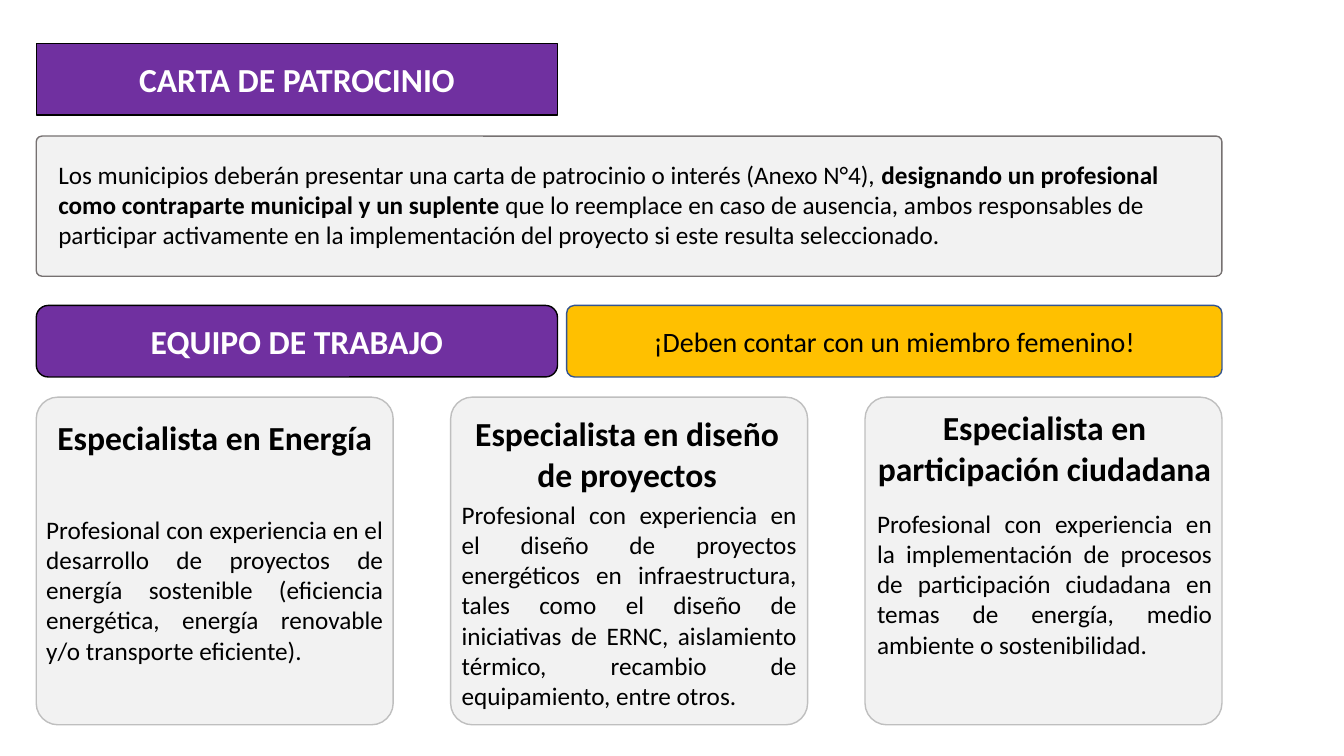
from lxml.etree import SubElement
from pptx import Presentation
from pptx.dml.color import RGBColor
from pptx.enum.shapes import MSO_SHAPE
from pptx.enum.text import MSO_ANCHOR, MSO_AUTO_SIZE, PP_ALIGN
from pptx.oxml.ns import qn
from pptx.util import Inches, Pt

PURPLE, AMBER, PALE_GRAY = "7030A0", "FFC000", "F2F2F2"
BLACK, WHITE = "000000", "FFFFFF"
LEFT = 0.36
FULL_WIDTH = 11.76
HEADING_SIZE = (5.17, 0.71)
TEAM_TOP = 3.03
CARD_TOP, CARD_WIDTH, CARD_HEIGHT = 3.94, 3.54, 3.25
CARD_STEP = (FULL_WIDTH - CARD_WIDTH) / 2

# Each card: name, place of the name, profile, place of the profile
SPECIALISTS = [
    ("Especialista en Energía", (0.37, 4.09, 3.52, 0.5),
     "Profesional con experiencia en el desarrollo de proyectos de energía sostenible "
     "(eficiencia energética, energía renovable y/o transporte eficiente).",
     (0.36, 5.05, 3.54, 1.62)),
    ("Especialista en diseño de proyectos", (4.46, 4.05, 3.52, 0.91),
     "Profesional con experiencia en el diseño de proyectos energéticos en infraestructura, "
     "tales como el diseño de iniciativas de ERNC, aislamiento térmico, recambio de "
     "equipamiento, entre otros.",
     (4.48, 4.9, 3.52, 2.22)),
    ("Especialista en participación ciudadana", (8.6, 3.99, 3.52, 0.91),
     "Profesional con experiencia en la implementación de procesos de participación "
     "ciudadana en temas de energía, medio ambiente o sostenibilidad.",
     (8.6, 4.99, 3.52, 1.62)),
]


def color(hex_code):
    return RGBColor.from_string(hex_code)


class SlideBuilder:
    font_name = "Calibri"

    def __init__(self, slide):
        self.slide = slide

    def paint(self, shape, fill, line):
        shape.fill.solid()
        shape.fill.fore_color.rgb = color(fill)
        shape.line.color.rgb = color(line)
        shape.line.width = Pt(1)

    def set_text(self, shape, spans, size, bold=None, ink=BLACK,
                 align=PP_ALIGN.LEFT, anchor=MSO_ANCHOR.TOP):
        """Fill a shape with one paragraph made of (text, bold) spans or a plain string."""
        frame = shape.text_frame
        frame.word_wrap = True
        frame.auto_size = MSO_AUTO_SIZE.NONE
        frame.vertical_anchor = anchor
        para = frame.paragraphs[0]
        para.alignment = align
        para.font.name = self.font_name
        para.font.size = Pt(size)
        para.font.bold = bold
        para.font.color.rgb = color(ink)
        if isinstance(spans, str):
            spans = [(spans, None)]
        for text, span_bold in spans:
            span = para.add_run()
            span.text = text
            span.font.bold = span_bold

    def title(self, text, left, top, width, height):
        """Turn the title placeholder into a rounded purple heading."""
        title = self.slide.shapes.title
        title.left, title.top = Inches(left), Inches(top)
        title.width, title.height = Inches(width), Inches(height)
        outline = SubElement(title.element.spPr, qn("a:prstGeom"), prst="roundRect")
        SubElement(outline, qn("a:avLst"))
        self.heading_style(title, text)

    def heading_style(self, shape, text):
        self.paint(shape, PURPLE, BLACK)
        self.set_text(shape, text, 24, True, WHITE, PP_ALIGN.CENTER, MSO_ANCHOR.MIDDLE)

    def box(self, left, top, width, height, fill, line, rounding=0.167):
        box = self.slide.shapes.add_shape(
            MSO_SHAPE.ROUNDED_RECTANGLE,
            Inches(left), Inches(top), Inches(width), Inches(height))
        box.adjustments[0] = rounding
        box.shadow.inherit = False
        self.paint(box, fill, line)
        return box

    def text(self, spans, place, size, **style):
        box = self.slide.shapes.add_textbox(*map(Inches, place))
        self.set_text(box, spans, size, **style)


def main():
    deck = Presentation()
    deck.slide_width, deck.slide_height = Inches(13.33), Inches(7.5)
    page = SlideBuilder(deck.slides.add_slide(deck.slide_layouts[5]))

    page.title("CARTA DE PATROCINIO", LEFT, 0.43, *HEADING_SIZE)
    page.box(LEFT, 1.35, FULL_WIDTH, 1.39, PALE_GRAY, "767171", 0.041)
    page.text([
        ("Los municipios deberán presentar una carta de patrocinio o interés (Anexo N°4), ", None),
        ("designando un profesional como contraparte municipal y un suplente ", True),
        ("que lo reemplace en caso de ausencia, ambos responsables de participar activamente "
         "en la implementación del proyecto si este resulta seleccionado.", None),
    ], (0.48, 1.53, 11.64, 1.01), 18)

    team_heading = page.box(LEFT, TEAM_TOP, *HEADING_SIZE, PURPLE, BLACK)
    page.heading_style(team_heading, "EQUIPO DE TRABAJO")
    notice = page.box(5.62, TEAM_TOP, 6.5, HEADING_SIZE[1], AMBER, "325491", 0.109)
    page.set_text(notice, "¡Deben contar con un miembro femenino!", 20,
                  align=PP_ALIGN.CENTER, anchor=MSO_ANCHOR.MIDDLE)

    for index, (name, name_place, profile, profile_place) in enumerate(SPECIALISTS):
        page.box(LEFT + index * CARD_STEP, CARD_TOP, CARD_WIDTH, CARD_HEIGHT,
                 PALE_GRAY, "BFBFBF", 0.066)
        page.text(name, name_place, 24, bold=True, align=PP_ALIGN.CENTER)
        page.text(profile, profile_place, 18, align=PP_ALIGN.JUSTIFY)

    deck.save("out.pptx")


if __name__ == "__main__":
    main()
